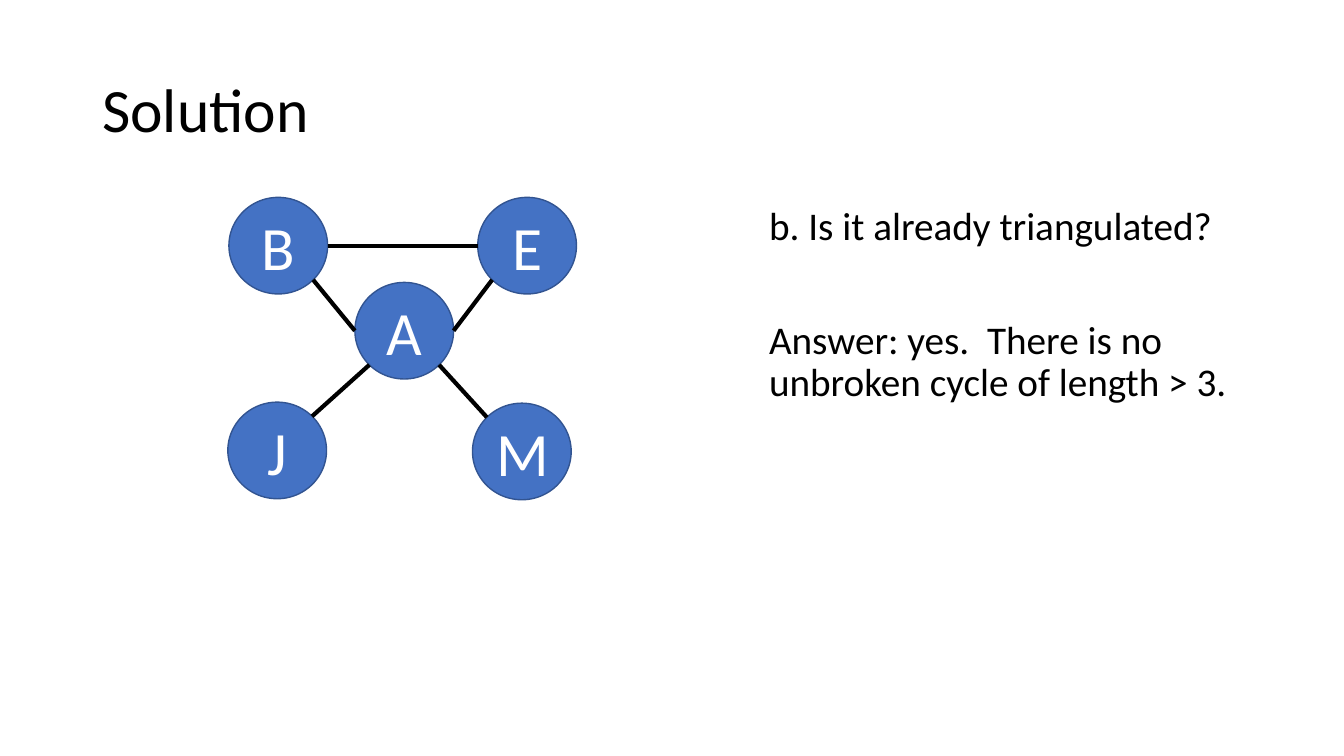
from math import sqrt

from lxml.etree import SubElement
from pptx import Presentation
from pptx.dml.color import RGBColor
from pptx.enum.shapes import MSO_CONNECTOR, MSO_SHAPE
from pptx.enum.text import MSO_ANCHOR, PP_ALIGN
from pptx.oxml.ns import qn
from pptx.util import Emu, Pt

PX = 9525  # EMU per px, 96 px to the inch
FONT = "Calibri"
BLACK = RGBColor(0x00, 0x00, 0x00)
WHITE = RGBColor(0xFF, 0xFF, 0xFF)
BLUE = RGBColor(0x44, 0x72, 0xC4)
DARK_BLUE = RGBColor(0x32, 0x54, 0x91)

NODE_W, NODE_H = 94, 92
NODES = {"B": (218, 188), "E": (455, 188), "A": (338, 269),
         "J": (217, 383), "M": (450, 384)}

# Points on a node's rim, as directions from its centre
D = sqrt(0.5)
RIM = {"left": (-1, 0), "right": (1, 0), "top left": (-D, -D),
       "top right": (D, -D), "bottom left": (-D, D), "bottom right": (D, D)}
EDGES = [("B", "bottom right", "A", "left"),
         ("E", "bottom left", "A", "right"),
         ("B", "right", "E", "left"),
         ("A", "bottom left", "J", "top right"),
         ("A", "bottom right", "M", "top left")]


def px(n):
    return Emu(round(n * PX))


def style_paragraph(p, size, color):
    for r in p.runs:
        r.font.name = FONT
        r.font.size = Pt(size)
        r.font.color.rgb = color


def add_text(s, x, y, w, h, lines, size, anchor=MSO_ANCHOR.TOP):
    """Add a text box; lines holds pairs of text and space before in points."""
    tf = s.shapes.add_textbox(px(x), px(y), px(w), px(h)).text_frame
    tf.word_wrap = True
    tf.vertical_anchor = anchor
    for i, (text, before) in enumerate(lines):
        p = tf.add_paragraph() if i else tf.paragraphs[0]
        p.text = text
        p.line_spacing = 0.9
        p.space_before = Pt(before)
        style_paragraph(p, size, BLACK)


def add_node(s, name):
    x, y = NODES[name]
    sp = s.shapes.add_shape(MSO_SHAPE.OVAL, px(x), px(y), px(NODE_W), px(NODE_H))
    sp.shadow.inherit = False
    sp.fill.solid()
    sp.fill.fore_color.rgb = BLUE
    sp.line.color.rgb = DARK_BLUE
    sp.line.width = Pt(1)
    tf = sp.text_frame
    tf.text = name
    tf.vertical_anchor = MSO_ANCHOR.MIDDLE
    p = tf.paragraphs[0]
    p.alignment = PP_ALIGN.CENTER
    style_paragraph(p, 44, WHITE)


def rim_point(name, side):
    x, y = NODES[name]
    dx, dy = RIM[side]
    return px(x + NODE_W / 2 * (1 + dx)), px(y + NODE_H / 2 * (1 + dy))


def add_edge(s, start, start_side, end, end_side):
    line = s.shapes.add_connector(MSO_CONNECTOR.STRAIGHT,
                                  *rim_point(start, start_side),
                                  *rim_point(end, end_side))
    line.line.color.rgb = BLACK
    line.line.width = Pt(3)
    SubElement(line._element.spPr, qn("a:effectLst"))


def main():
    prs = Presentation()
    prs.slide_width, prs.slide_height = px(1280), px(720)
    s = prs.slides.add_slide(prs.slide_layouts[6])

    # Title and answer
    add_text(s, 88, 38, 1104, 139, [("Solution", 0)], 44, MSO_ANCHOR.MIDDLE)
    add_text(s, 723, 192, 544, 457,
             [("b. Is it already triangulated?", 10),
              ("Answer: yes.  There is no unbroken cycle of length > 3.", 51)], 28)

    # Graph
    for name in NODES:
        add_node(s, name)
    for edge in EDGES:
        add_edge(s, *edge)

    prs.save("out.pptx")


if __name__ == "__main__":
    main()
